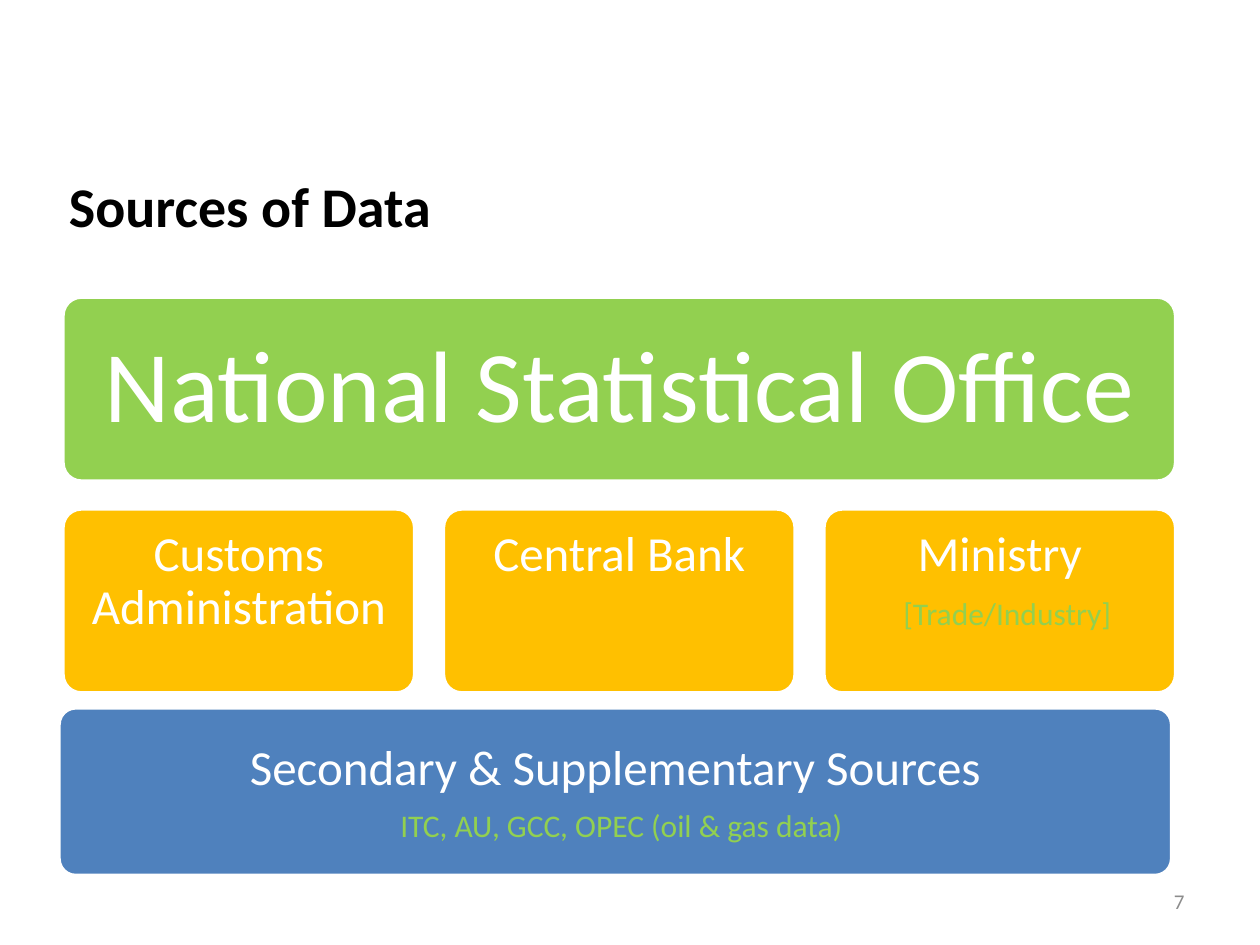
from pptx import Presentation
from pptx import util as u
from pptx.dml.color import RGBColor
from pptx.enum import shapes, text

GREEN, AMBER, BLUE, WHITE = "92D050", "FFC000", "4F81BD", "FFFFFF"
MIDDLE, TOP = text.MSO_ANCHOR.MIDDLE, text.MSO_ANCHOR.TOP
LEFT, CENTER, RIGHT = text.PP_ALIGN.LEFT, text.PP_ALIGN.CENTER, text.PP_ALIGN.RIGHT


def colour(value):
    return RGBColor.from_string(value)


def write(frame, wording, size, ink, align=LEFT, anchor=TOP, bold=False):
    frame.word_wrap = True
    frame.vertical_anchor = anchor
    paragraph = frame.paragraphs[0]
    paragraph.alignment = align
    run = paragraph.add_run()
    run.text = wording
    run.font.name = "Calibri"
    run.font.size = u.Pt(size)
    run.font.bold = bold
    run.font.color.rgb = colour(ink)
    return paragraph


def add_label(slide, box, wording, size, ink, **style):
    label = slide.shapes.add_textbox(*map(u.Cm, box))
    write(label.text_frame, wording, size, ink, **style)


def add_panel(slide, box, wording, size, fill, inset, anchor=TOP):
    panel = slide.shapes.add_shape(
        shapes.MSO_SHAPE.ROUNDED_RECTANGLE, *map(u.Cm, box))
    panel.adjustments[0] = 0.1
    panel.shadow.inherit = False
    panel.fill.solid()
    panel.fill.fore_color.rgb = colour(fill)
    panel.line.color.rgb = colour(WHITE)
    panel.line.width = u.Pt(2)
    frame = panel.text_frame
    frame.margin_left = frame.margin_right = u.Cm(inset)
    frame.margin_top = frame.margin_bottom = u.Cm(inset)
    write(frame, wording, size, WHITE, CENTER, anchor).line_spacing = 0.9


def add_primary_sources(slide, box):
    left, top, width, height = box
    gap, row_height = 0.58, 3.71
    add_panel(slide, (left, top, width, row_height),
              "National Statistical Office", 58, GREEN, 0.61, MIDDLE)
    agencies = ["Customs Administration", "Central Bank", "Ministry"]
    agency_width = (width - gap * (len(agencies) - 1)) / len(agencies)
    row_top = top + height - row_height
    for column, agency in enumerate(agencies):
        agency_left = left + column * (agency_width + gap)
        add_panel(slide, (agency_left, row_top, agency_width, row_height),
                  agency, 28, AMBER, 0.3)
    add_label(slide, (agency_left + 1.35, row_top + 1.6, 5.28, 1.02),
              "[Trade/Industry]", 18, GREEN)


def add_secondary_sources(slide, box):
    left, top, width, height = box
    add_panel(slide, box, "Secondary & Supplementary Sources", 28, BLUE, 0.61)
    add_label(slide, (left + 6.63, top + 1.86, 11, 1.02),
              "ITC, AU, GCC, OPEC (oil & gas data)", 18, GREEN)


def main():
    deck = Presentation()
    deck.slide_width, deck.slide_height = u.Cm(25.4), u.Cm(19.05)
    slide = deck.slides.add_slide(deck.slide_layouts[6])
    add_label(slide, (1.14, 2.97, 22.86, 2.34), "Sources of Data", 32,
              "000000", anchor=MIDDLE, bold=True)
    add_label(slide, (18.2, 17.65, 5.93, 1.02), "7", 12, "8C8C8C",
              align=RIGHT, anchor=MIDDLE)
    add_primary_sources(slide, (1.27, 5.99, 22.43, 7.98))
    add_secondary_sources(slide, (1.19, 14.27, 22.43, 3.38))
    deck.save("out.pptx")


if __name__ == "__main__":
    main()
